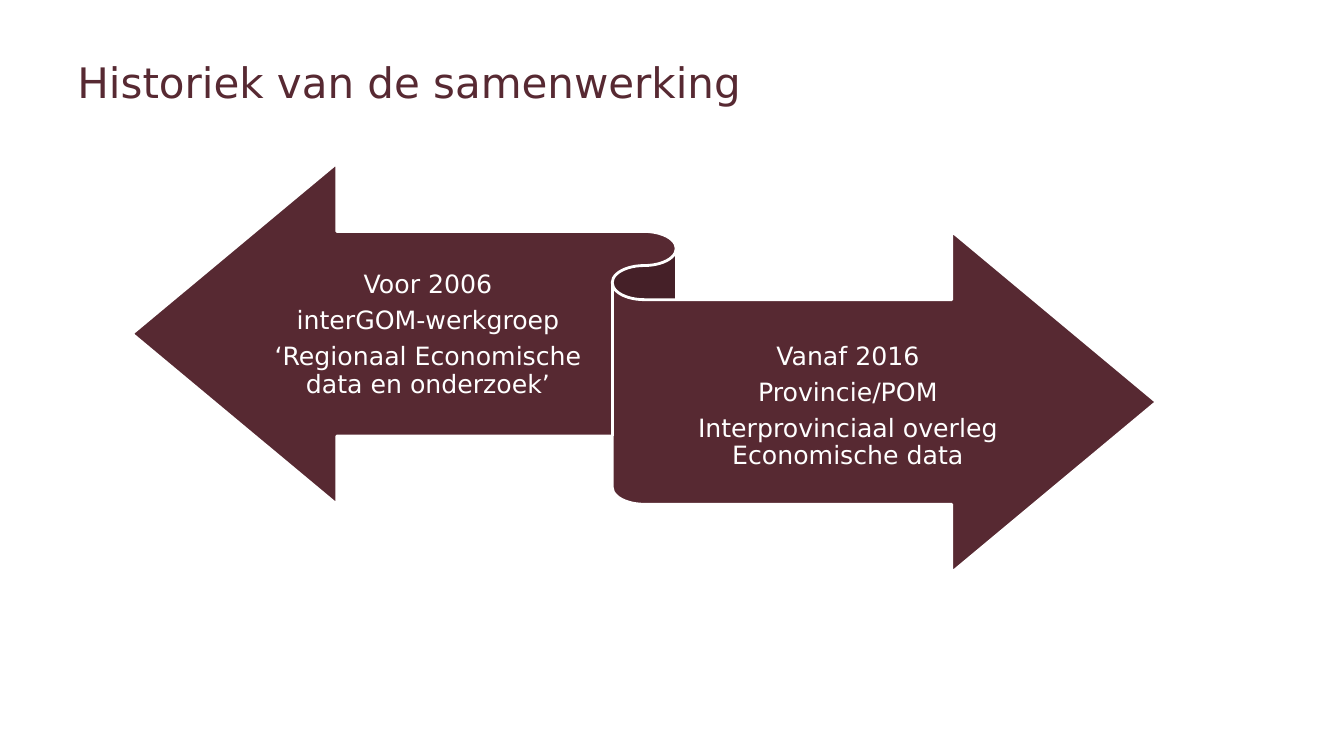
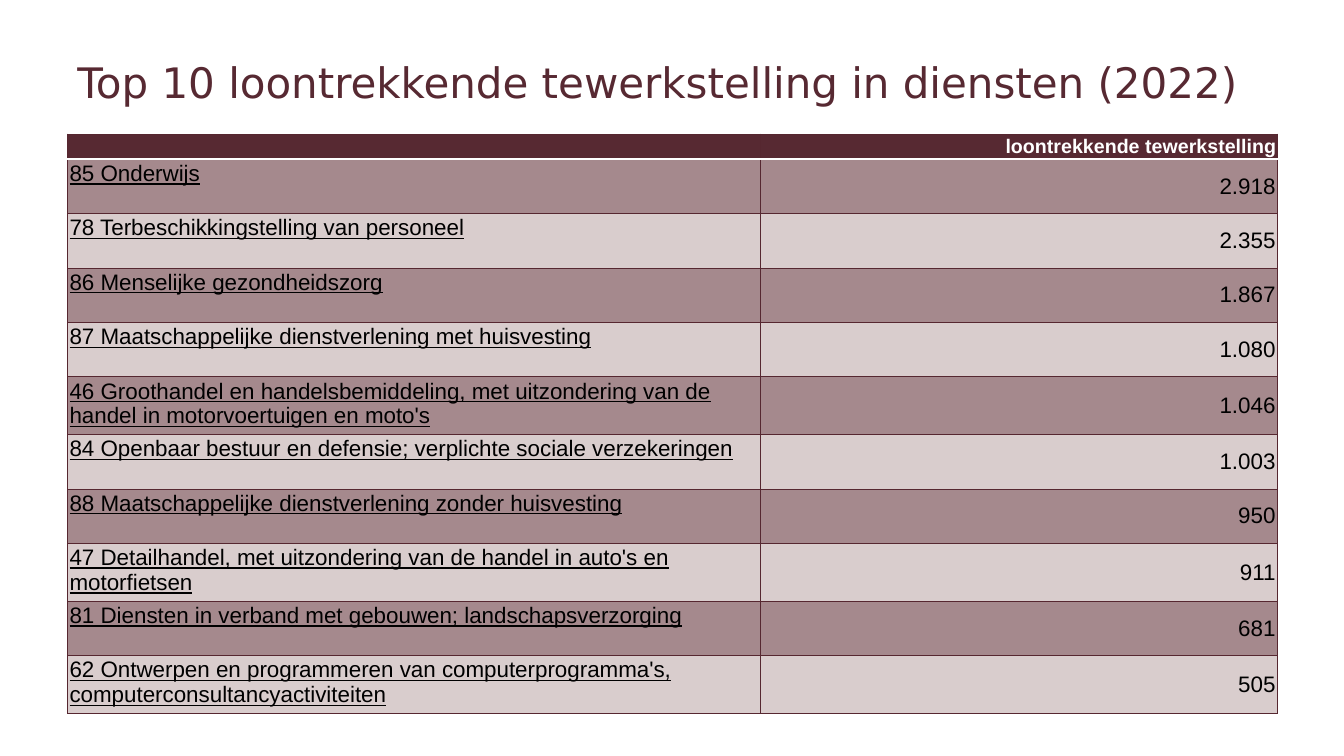
"""Build two slides on regional cooperation and employment in services."""
from dataclasses import dataclass
from typing import NamedTuple

from lxml.etree import SubElement
from pptx import Presentation
from pptx.dml.color import RGBColor
from pptx.enum.shapes import MSO_SHAPE
from pptx.enum.text import MSO_ANCHOR, PP_ALIGN
from pptx.oxml.ns import qn
from pptx.presentation import Presentation as Deck
from pptx.slide import Slide
from pptx.table import _Cell as Cell
from pptx.text.text import TextFrame
from pptx.util import Inches, Pt


@dataclass(frozen=True)
class Theme:
    wine: str = "572932"
    border: str = "562730"
    white: str = "FFFFFF"
    black: str = "000000"
    band_dark: str = "A5898D"
    band_light: str = "D9CDCD"
    heading_font: str = "DejaVu Sans"
    table_font: str = "Arial"
    title_size: float = 30
    arrow_size: float = 18
    header_size: float = 14
    body_size: float = 16


class Box(NamedTuple):
    left: float
    top: float
    width: float
    height: float

    def lengths(self) -> tuple[Inches, ...]:
        return tuple(Inches(value) for value in self)


class ArrowLabel(NamedTuple):
    box: Box
    paragraphs: list[str]


class Sector(NamedTuple):
    name: str
    jobs: str


THEME = Theme()
TITLE_BOX = Box(0.67, 0.5, 12, 0.63)
RIBBON_BOX = Box(1.31, 1.62, 10.16, 4.06)
TABLE_BOX = Box(0.67, 1.33, 12, 5.65)
COLUMN_WIDTHS = (6.87, 5.13)
HEADER_HEIGHT, ROW_HEIGHT = 0.25, 0.54

ARROW_LABELS = [
    ArrowLabel(Box(2.57, 2.33, 3.35, 1.99),
               ["Voor 2006", "interGOM-werkgroep", "‘Regionaal Economische data en onderzoek’"]),
    ArrowLabel(Box(6.43, 3.04, 3.96, 1.99),
               ["Vanaf 2016", "Provincie/POM", "Interprovinciaal overleg\nEconomische data"]),
]

SECTORS = [
    Sector("85 Onderwijs", "2.918"),
    Sector("78 Terbeschikkingstelling van personeel", "2.355"),
    Sector("86 Menselijke gezondheidszorg", "1.867"),
    Sector("87 Maatschappelijke dienstverlening met huisvesting", "1.080"),
    Sector("46 Groothandel en handelsbemiddeling, met uitzondering van de handel "
           "in motorvoertuigen en moto's", "1.046"),
    Sector("84 Openbaar bestuur en defensie; verplichte sociale verzekeringen", "1.003"),
    Sector("88 Maatschappelijke dienstverlening zonder huisvesting", "950"),
    Sector("47 Detailhandel, met uitzondering van de handel in auto's en motorfietsen", "911"),
    Sector("81 Diensten in verband met gebouwen; landschapsverzorging", "681"),
    Sector("62 Ontwerpen en programmeren van computerprogramma's, "
           "computerconsultancyactiviteiten", "505"),
]


def write_text(frame: TextFrame, paragraphs: list[str], *, size: float, color: str,
               font: str, align: PP_ALIGN = PP_ALIGN.LEFT, bold: bool = False,
               underline: bool = False, line_spacing: float = 1.0,
               space_after: float = 0) -> None:
    """Fill a text frame with uniformly formatted paragraphs."""
    for index, text in enumerate(paragraphs):
        para = frame.add_paragraph() if index else frame.paragraphs[0]
        para.text = text
        para.alignment = align
        para.line_spacing = line_spacing
        para.space_after = Pt(space_after)
        for span in para.runs:
            span.font.size = Pt(size)
            span.font.name = font
            span.font.bold = bold
            span.font.underline = underline
            span.font.color.rgb = RGBColor.from_string(color)
        if not text:
            para._p.get_or_add_endParaRPr().set("sz", str(int(size * 100)))


def add_text_box(page: Slide, box: Box, side_margin: float = 0.1) -> TextFrame:
    """Add a wrapping, vertically centred text box."""
    frame = page.shapes.add_textbox(*box.lengths()).text_frame
    frame.word_wrap = True
    frame.vertical_anchor = MSO_ANCHOR.MIDDLE
    frame.margin_left = frame.margin_right = Inches(side_margin)
    return frame


def add_page(deck: Deck, title: str) -> Slide:
    """Add a blank page with the shared title style."""
    page = deck.slides.add_slide(deck.slide_layouts[6])
    write_text(add_text_box(page, TITLE_BOX), [title], size=THEME.title_size,
               color=THEME.wine, font=THEME.heading_font)
    return page


def set_border(cell: Cell, side: str, color: str, width: float) -> None:
    """Append one border line to a cell."""
    line = SubElement(cell._tc.get_or_add_tcPr(), qn(f"a:ln{side}"), w=str(Pt(width)))
    fill = SubElement(line, qn("a:solidFill"))
    SubElement(fill, qn("a:srgbClr"), val=color)


def style_cell(cell: Cell, row: int, fill: str, margin: float) -> None:
    """Set the borders, fill and margins of a cell."""
    for side in "LRTB":
        below_header = (row, side) in ((0, "B"), (1, "T"))
        set_border(cell, side, *((THEME.white, 2) if below_header else (THEME.border, 0.75)))
    cell.fill.solid()
    cell.fill.fore_color.rgb = RGBColor.from_string(fill)
    cell.margin_left = cell.margin_right = Inches(margin)
    cell.margin_top = cell.margin_bottom = Inches(margin if row else 0)


def build_history(deck: Deck) -> None:
    """Draw the two-way ribbon with its labels."""
    page = add_page(deck, "Historiek van de samenwerking")
    ribbon = page.shapes.add_shape(MSO_SHAPE.LEFT_RIGHT_RIBBON, *RIBBON_BOX.lengths())
    ribbon.shadow.inherit = False
    ribbon.fill.solid()
    ribbon.fill.fore_color.rgb = RGBColor.from_string(THEME.wine)
    ribbon.line.color.rgb = RGBColor.from_string(THEME.white)
    ribbon.line.width = Pt(2)
    for label in ARROW_LABELS:
        write_text(add_text_box(page, label.box, side_margin=0), label.paragraphs,
                   size=THEME.arrow_size, color=THEME.white, font=THEME.heading_font,
                   align=PP_ALIGN.CENTER, line_spacing=0.9, space_after=6.3)


def build_employment(deck: Deck) -> None:
    """Draw the table of the ten largest service sectors."""
    page = add_page(deck, "Top 10 loontrekkende tewerkstelling in diensten (2022)")
    table = page.shapes.add_table(len(SECTORS) + 1, len(COLUMN_WIDTHS),
                                  *TABLE_BOX.lengths()).table
    table.horz_banding = False
    for column, width in zip(table.columns, COLUMN_WIDTHS):
        column.width = Inches(width)
    for row, sector in enumerate([Sector("", "loontrekkende tewerkstelling"), *SECTORS]):
        header = row == 0
        table.rows[row].height = Inches(HEADER_HEIGHT if header else ROW_HEIGHT)
        fill = THEME.wine if header else THEME.band_dark if row % 2 else THEME.band_light
        for column, text in enumerate(sector):
            cell = table.cell(row, column)
            style_cell(cell, row, fill, margin=0.01 if header else 0.02)
            numeric = column == 1
            cell.vertical_anchor = MSO_ANCHOR.MIDDLE if numeric and not header else MSO_ANCHOR.TOP
            write_text(cell.text_frame, [text], font=THEME.table_font,
                       size=THEME.header_size if header else THEME.body_size,
                       color=THEME.white if header else THEME.black, bold=header,
                       underline=not numeric, line_spacing=1.07 if header else 1.0,
                       align=PP_ALIGN.RIGHT if numeric else PP_ALIGN.LEFT)


def main() -> None:
    """Build and save the deck."""
    deck = Presentation()
    deck.slide_width, deck.slide_height = Inches(13.33), Inches(7.5)
    build_history(deck)
    build_employment(deck)
    deck.save("out.pptx")


if __name__ == "__main__":
    main()
